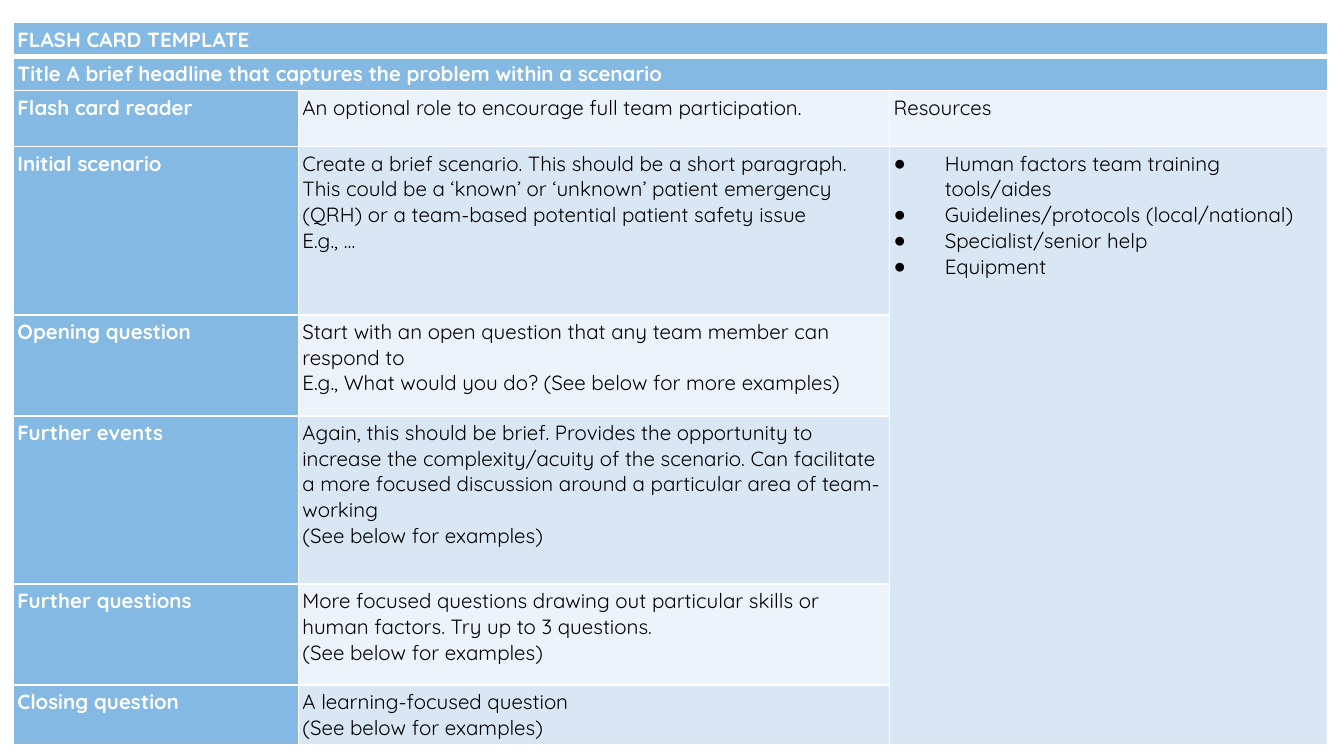
import dataclasses
import lxml.etree
import pptx
import pptx.dml.color
import pptx.oxml.ns
import pptx.util


@dataclasses.dataclass(frozen=True)
class Theme:
    """Colours, type and line sizes of the card."""
    head: str = "83B9E2"
    pale: str = "EDF3FA"
    tint: str = "D9E6F4"
    white: str = "FFFFFF"
    black: str = "000000"
    font: str = "Quicksand"
    mark: str = "Arial"
    size: float = 11
    inset: float = 0.03
    hang: float = 0.38
    thin: float = 1
    thick: float = 3


THEME = Theme()
WIDE = 10
HIGH = WIDE * 9 / 16
COLS = (0.212, 0.44, 0.326)
ROWS = (3, 3, 5, 15, 9, 15, 9, 5)
BOX = (0.01, 0.03, sum(COLS), 0.95)
BANDS = (
    "FLASH CARD TEMPLATE",
    "Title A brief headline that captures the problem within a scenario",
)
STEPS = (
    ("Flash card reader", ("An optional role to encourage full team participation.",)),
    ("Initial scenario", (
        "Create a brief scenario. This should be a short paragraph.",
        "This could be a ‘known’ or ‘unknown’ patient emergency (QRH) "
        "or a team-based potential patient safety issue",
        "E.g., …")),
    ("Opening question", (
        "Start with an open question that any team member can respond to",
        "E.g., What would you do? (See below for more examples)")),
    ("Further events", (
        "Again, this should be brief. Provides the opportunity to increase the "
        "complexity/acuity of the scenario. Can facilitate a more focused "
        "discussion around a particular area of team-working",
        "(See below for examples)")),
    ("Further questions", (
        "More focused questions drawing out particular skills or human factors. "
        "Try up to 3 questions.",
        "(See below for examples)")),
    ("Closing question", ("A learning-focused question", "(See below for examples)")),
)
TOOLS = (
    "Human factors team training tools/aides",
    "Guidelines/protocols (local/national)",
    "Specialist/senior help",
    "Equipment",
)


def paint(item, tone):
    """Give a fill a solid colour."""
    item.solid()
    item.fore_color.rgb = pptx.dml.color.RGBColor.from_string(tone)


def add_tag(base, name, **attrs):
    """Append a drawing element to its parent."""
    return lxml.etree.SubElement(base, pptx.oxml.ns.qn("a:" + name), **attrs)


def edge(cell, top, base):
    """Draw the white borders of a cell."""
    props = cell._tc.get_or_add_tcPr()
    for side, size in zip("LRTB", (THEME.thin, THEME.thin, top, base)):
        line = add_tag(props, "ln" + side, w=str(pptx.util.Pt(size)))
        add_tag(add_tag(line, "solidFill"), "srgbClr", val=THEME.white)


def bullet(para):
    """Give a paragraph a hanging round bullet."""
    props = para._p.get_or_add_pPr()
    hang = pptx.util.Inches(THEME.hang)
    props.set("marL", str(hang))
    props.set("indent", str(-hang))
    add_tag(props, "buFont", typeface=THEME.mark)
    add_tag(props, "buChar", char="●")


def write(cell, lines, head=False, dots=False):
    """Fill a cell with styled paragraphs."""
    frame = cell.text_frame
    frame.text = "\n".join(lines)
    for para in frame.paragraphs:
        if dots:
            bullet(para)
        font = para.font
        font.name, font.size, font.bold = THEME.font, pptx.util.Pt(THEME.size), head
        paint(font.fill, THEME.white if head else THEME.black)


def dress(table):
    """Set the borders, insets and fill of every cell."""
    inset = pptx.util.Inches(THEME.inset)
    for r in range(len(ROWS)):
        for c in range(len(COLS)):
            cell = table.cell(r, c)
            edge(cell, THEME.thick if r == 1 else THEME.thin,
                 THEME.thick if r == 0 else THEME.thin)
            cell.margin_left = cell.margin_right = inset
            cell.margin_top = cell.margin_bottom = inset
            band = THEME.tint if r % 2 else THEME.pale
            paint(cell.fill, THEME.head if r < len(BANDS) or c == 0 else band)


def add_card(slide, box):
    """Place the flash card table in a box given as slide shares."""
    left, top, width, height = box
    area = [pptx.util.Inches(n) for n in
            (left * WIDE, top * HIGH, width * WIDE, height * HIGH)]
    table = slide.shapes.add_table(len(ROWS), len(COLS), *area).table
    for col, share in zip(table.columns, COLS):
        col.width = int(area[2] * share / sum(COLS))
    for row, share in zip(table.rows, ROWS):
        row.height = int(area[3] * share / sum(ROWS))
    dress(table)
    for r, text in enumerate(BANDS):
        table.cell(r, 0).merge(table.cell(r, len(COLS) - 1))
        write(table.cell(r, 0), [text], head=True)
    start = len(BANDS)
    for r, (name, lines) in enumerate(STEPS, start):
        write(table.cell(r, 0), [name], head=True)
        write(table.cell(r, 1), lines)
    write(table.cell(start, 2), ["Resources"])
    table.cell(start + 1, 2).merge(table.cell(len(ROWS) - 1, 2))
    write(table.cell(start + 1, 2), TOOLS, dots=True)


def main():
    """Build and save the slide."""
    deck = pptx.Presentation()
    deck.slide_width = pptx.util.Inches(WIDE)
    deck.slide_height = pptx.util.Inches(HIGH)
    slide = deck.slides.add_slide(deck.slide_layouts[6])
    add_card(slide, BOX)
    deck.save("out.pptx")


if __name__ == "__main__":
    main()
